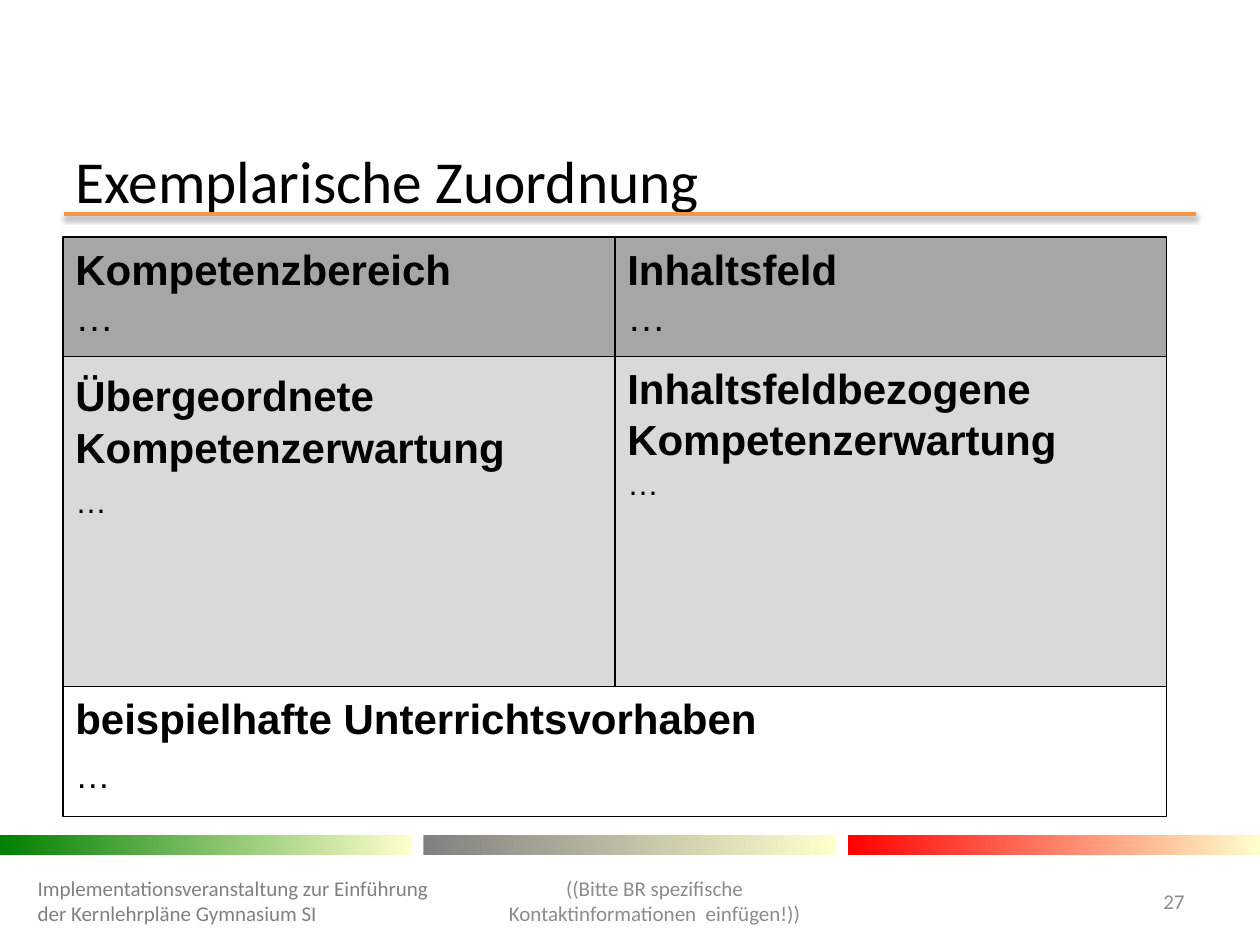
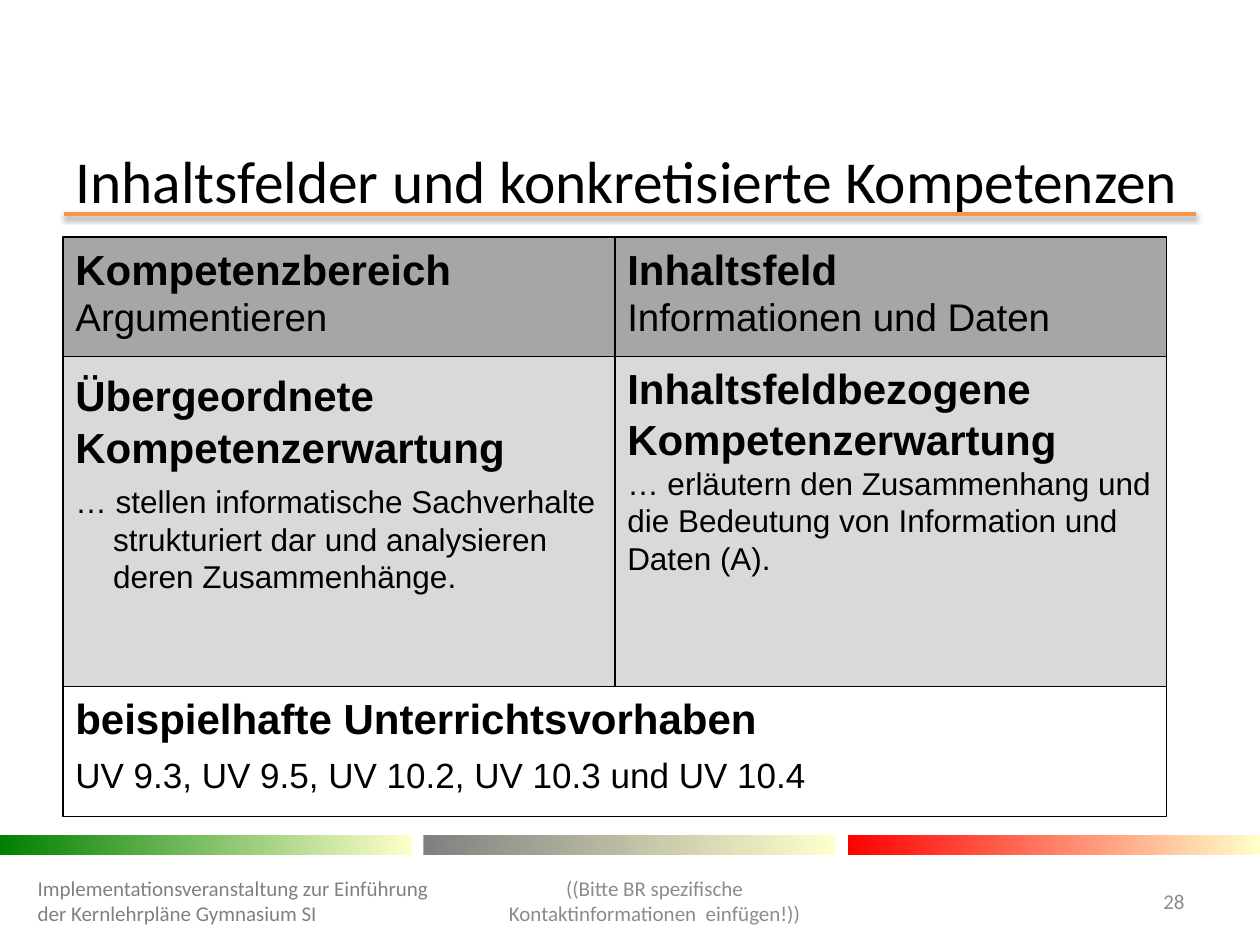
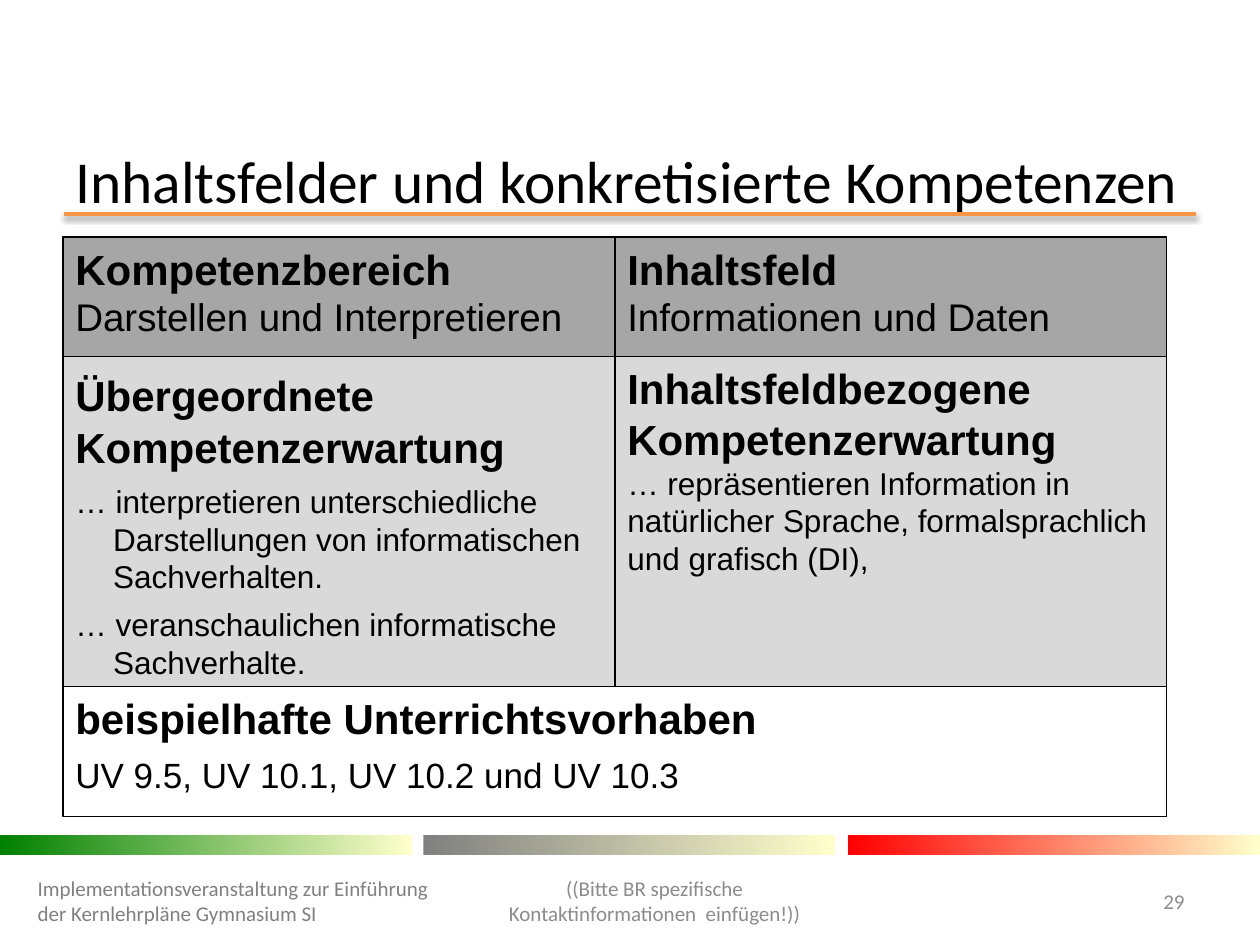
from collections import namedtuple
from dataclasses import dataclass

from lxml import etree
from pptx import Presentation
from pptx import util as u
from pptx.dml.color import RGBColor
from pptx.enum import shapes, text
from pptx.oxml import ns

PX = 9144
Box = namedtuple("Box", "left top width height")
Run = namedtuple("Run", "text size bold")


@dataclass(frozen=True)
class Theme:
    """Colours, fonts and type sizes shared by all slides."""
    black: str = "000000"
    white: str = "FFFFFF"
    header_fill: str = "A6A6A6"
    body_fill: str = "D9D9D9"
    rule: str = "F79646"
    footer: str = "808080"
    contact: str = "8B8B8B"
    number: str = "8C8C8C"
    bands: tuple = ("008000", "808080", "FF0000")
    band_end: str = "FFFFCC"
    title_font: str = "Calibri"
    cell_font: str = "Arial"
    title_size: int = 34
    footer_size: int = 12
    heading_size: int = 24
    heading_gap_size: int = 28
    area_size: int = 22
    project_size: int = 20
    expectation_size: int = 18
    paragraph_gap: float = 5.6


THEME = Theme()
GRID = Box(50, 188, 876, 460)
HEADER_HEIGHT, BODY_HEIGHT = 95, 262
FOOTER_TEXT = "Implementationsveranstaltung zur Einführung der Kernlehrpläne Gymnasium SI"
CONTACT_TEXT = "((Bitte BR spezifische Kontaktinformationen  einfügen!))"
FIRST_NUMBER = 27
CONTENT_TITLE = "Inhaltsfelder und konkretisierte Kompetenzen"
SLIDES = [
    dict(title="Exemplarische Zuordnung", competence="…", field="…",
         general=["…"], specific="…", projects="…"),
    dict(title=CONTENT_TITLE, competence="Argumentieren",
         field="Informationen und Daten",
         general=["… stellen informatische Sachverhalte strukturiert dar "
                  "und analysieren deren Zusammenhänge."],
         specific="… erläutern den Zusammenhang und die Bedeutung von "
                  "Information und Daten (A).",
         projects="UV 9.3, UV 9.5, UV 10.2, UV 10.3 und UV 10.4"),
    dict(title=CONTENT_TITLE, competence="Darstellen und Interpretieren",
         field="Informationen und Daten",
         general=["… interpretieren unterschiedliche Darstellungen von "
                  "informatischen Sachverhalten.",
                  "… veranschaulichen informatische Sachverhalte."],
         specific="… repräsentieren Information in natürlicher Sprache, "
                  "formalsprachlich und grafisch (DI),",
         projects="UV 9.5, UV 10.1, UV 10.2 und UV 10.3"),
]


def color(value):
    """Return the RGB colour for a hex value."""
    return RGBColor.from_string(value)


def emu(box):
    """Return the sides of a box in EMU."""
    return [side * PX for side in box]


def style_font(font, name, value, size=None, bold=None):
    """Set typeface, colour, size and weight of a font."""
    font.name, font.bold = name, bold
    font.color.rgb = color(value)
    if size:
        font.size = u.Pt(size)


def add_label(slide, box, words, size, value, align=text.PP_ALIGN.LEFT):
    """Add one vertically centred paragraph of text."""
    frame = slide.shapes.add_textbox(*emu(box)).text_frame
    frame.word_wrap = True
    frame.vertical_anchor = text.MSO_ANCHOR.MIDDLE
    paragraph = frame.paragraphs[0]
    paragraph.text = words
    paragraph.alignment = align
    style_font(paragraph.font, THEME.title_font, value, size)


def add_rectangle(slide, box):
    """Add a rectangle without shadow."""
    shape = slide.shapes.add_shape(shapes.MSO_SHAPE.RECTANGLE, *emu(box))
    shape.shadow.inherit = False
    return shape


def add_cell(slide, box, fill, paragraphs, gap=0, hanging=0):
    """Add a bordered cell; gap and hanging indent apply after its heading."""
    shape = add_rectangle(slide, box)
    shape.fill.solid()
    shape.fill.fore_color.rgb = color(fill)
    shape.line.color.rgb = color(THEME.black)
    shape.line.width = u.Pt(0.75)
    frame = shape.text_frame
    frame.word_wrap = True
    frame.vertical_anchor = text.MSO_ANCHOR.TOP
    for index, runs in enumerate(paragraphs):
        paragraph = frame.add_paragraph() if index else frame.paragraphs[0]
        paragraph.alignment = text.PP_ALIGN.LEFT
        if index:
            paragraph.space_before = u.Pt(gap)
            if hanging:
                properties = paragraph._p.get_or_add_pPr()
                properties.set("marL", str(hanging * PX))
                properties.set("indent", str(-hanging * PX))
        style_font(paragraph.font, THEME.cell_font, THEME.black)
        for part in runs:
            if part is None:
                paragraph.add_line_break()
                continue
            run = paragraph.add_run()
            run.text = part.text
            run.font.size, run.font.bold = u.Pt(part.size), part.bold


def heading(words):
    """Return a bold heading run."""
    return Run(words, THEME.heading_size, True)


def add_title(slide, box, words):
    """Add the slide title and the shadowed rule below it."""
    add_label(slide, box, words, THEME.title_size, THEME.black)
    rule_top = (box.top + 47) * PX
    rule = slide.shapes.add_connector(
        shapes.MSO_CONNECTOR.STRAIGHT, (box.left + 1) * PX, rule_top,
        (box.left + box.width - 1) * PX, rule_top)
    rule.line.color.rgb = color(THEME.rule)
    rule.line.width = u.Pt(2)
    effects = etree.SubElement(rule._element.spPr, ns.qn("a:effectLst"))
    shadow = etree.SubElement(effects, ns.qn("a:outerShdw"), blurRad="40000",
                              dist="20000", dir="5400000", rotWithShape="0")
    tint = etree.SubElement(shadow, ns.qn("a:srgbClr"), val=THEME.black)
    etree.SubElement(tint, ns.qn("a:alpha"), val="38000")


def add_bands(slide, box):
    """Add the gradient bands, spread evenly over the box."""
    width = 327
    step = (box.width - width) / (len(THEME.bands) - 1)
    for index, start in enumerate(THEME.bands):
        left = box.left + round(index * step)
        band = add_rectangle(slide, Box(left, box.top, width, box.height))
        band.line.fill.background()
        band.fill.gradient()
        band.fill.gradient_angle = 0
        for stop, value in zip(band.fill.gradient_stops, (start, THEME.band_end)):
            stop.color.rgb = color(value)


def add_footer(slide, box, number):
    """Add event name, contact note and slide number."""
    size = THEME.footer_size
    add_label(slide, Box(box.left + 20, box.top + 16, 331, 40),
              FOOTER_TEXT, size, THEME.footer)
    add_label(slide, Box(box.left + 374, box.top, 291, box.height),
              CONTACT_TEXT, size, THEME.contact, text.PP_ALIGN.CENTER)
    add_label(slide, Box(box.left + 886, box.top + 16, 64, 40),
              str(number), size, THEME.number, text.PP_ALIGN.RIGHT)


def add_assignment(slide, box, content):
    """Add the grid of competences, content fields and teaching projects."""
    half = box.width // 2
    middle = box.left + half
    body_top = box.top + HEADER_HEIGHT
    project_top = body_top + BODY_HEIGHT
    general = [[heading("Übergeordnete"), Run(" ", THEME.heading_gap_size, True),
                heading("Kompetenzerwartung")]]
    general += [[Run(words, THEME.expectation_size, False)]
                for words in content["general"]]
    add_cell(slide, Box(box.left, body_top, half, BODY_HEIGHT), THEME.body_fill,
             general, THEME.paragraph_gap, hanging=30)
    add_cell(slide, Box(middle, body_top, half, BODY_HEIGHT), THEME.body_fill,
             [[heading("Inhaltsfeldbezogene Kompetenzerwartung")],
              [Run(content["specific"], THEME.expectation_size, False)]])
    add_cell(slide, Box(box.left, project_top, box.width,
                        box.top + box.height - project_top), THEME.white,
             [[heading("beispielhafte Unterrichtsvorhaben")],
              [Run(content["projects"], THEME.project_size, False)]],
             THEME.paragraph_gap)
    for left, label, key in ((box.left, "Kompetenzbereich", "competence"),
                             (middle, "Inhaltsfeld", "field")):
        add_cell(slide, Box(left, box.top, half, HEADER_HEIGHT), THEME.header_fill,
                 [[heading(label), None,
                   Run(content[key], THEME.area_size, False)]])


def main():
    """Build and save the presentation."""
    presentation = Presentation()
    presentation.slide_width, presentation.slide_height = 1000 * PX, 750 * PX
    for number, content in enumerate(SLIDES, FIRST_NUMBER):
        slide = presentation.slides.add_slide(presentation.slide_layouts[6])
        add_bands(slide, Box(0, 663, 1000, 16))
        add_title(slide, Box(50, 123, 900, 39), content["title"])
        add_assignment(slide, GRID, content)
        add_footer(slide, Box(0, 679, 1000, 71), number)
    presentation.save("out.pptx")


if __name__ == "__main__":
    main()
